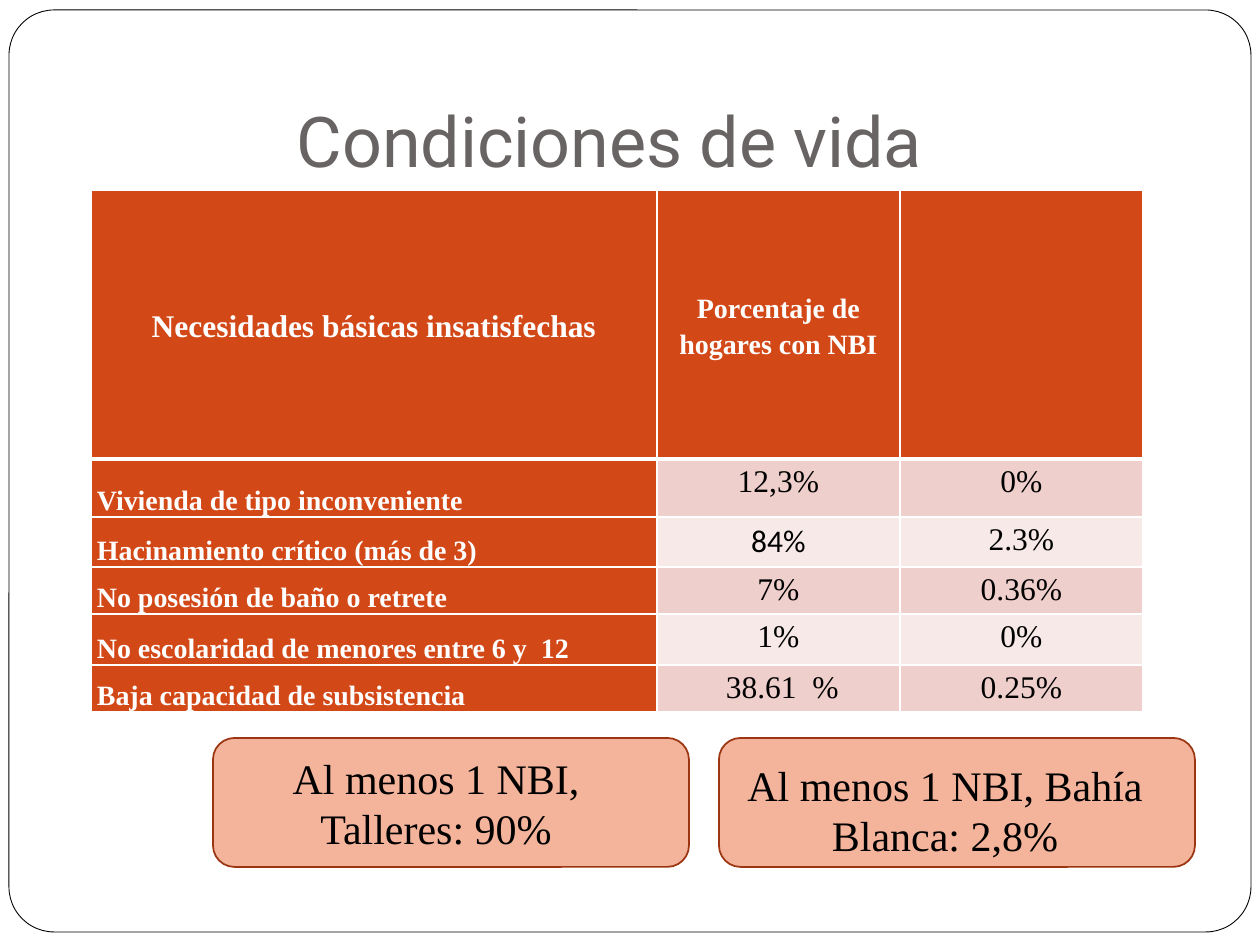
from lxml.etree import SubElement
from pptx import Presentation
from pptx.dml.color import RGBColor
from pptx.enum.shapes import MSO_SHAPE
from pptx.enum.text import MSO_ANCHOR, PP_ALIGN
from pptx.oxml.ns import qn
from pptx.util import Emu, Pt

PX_PER_INCH = 126
SERIF = "Times New Roman"
COLORS = {
    "white": "FFFFFF",
    "black": "000000",
    "title": "696464",
    "orange": "D34817",
    "band_dark": "EFCFCC",
    "band_light": "F7E9E8",
    "box_fill": "F4B39B",
    "box_line": "9C3511",
}

COLUMN_WIDTHS = [566, 243, 243]
ROW_HEIGHTS = [269, 58, 50, 47, 51, 47]
HEADERS = [("Necesidades básicas insatisfechas", 18),
           ("Porcentaje de hogares con NBI", 16), ("", 18)]
ROWS = [
    ("Vivienda de tipo inconveniente", "12,3%", "0%"),
    ("Hacinamiento crítico (más de 3)", "84%", "2.3%"),
    ("No posesión de baño o retrete", "7%", "0.36%"),
    ("No escolaridad de menores entre 6 y  12", "1%", "0%"),
    ("Baja capacidad de subsistencia", " 38.61  %", "0.25%"),
]


def px(length):
    return Emu(round(length * 914400 / PX_PER_INCH))


def color(name):
    return RGBColor.from_string(COLORS[name])


def style_paragraph(paragraph, size, font_color, font=SERIF, bold=False, align=PP_ALIGN.CENTER):
    paragraph.alignment = align
    paragraph.font.name = font
    paragraph.font.size = Pt(size)
    paragraph.font.bold = bold
    paragraph.font.color.rgb = color(font_color)


def add_rounded_box(slide, box, fill, line, line_width, corner=0.1667):
    shape = slide.shapes.add_shape(MSO_SHAPE.ROUNDED_RECTANGLE, *map(px, box))
    shape.adjustments[0] = corner
    shape.shadow.inherit = False
    shape.fill.solid()
    shape.fill.fore_color.rgb = color(fill)
    shape.line.color.rgb = color(line)
    shape.line.width = Pt(line_width)


def add_text(slide, box, text, size, font_color, font=SERIF, anchor=MSO_ANCHOR.TOP):
    frame = slide.shapes.add_textbox(*map(px, box)).text_frame
    frame.word_wrap = True
    frame.vertical_anchor = anchor
    paragraph = frame.paragraphs[0]
    paragraph.text = text
    style_paragraph(paragraph, size, font_color, font)
    return frame


def set_borders(cell, top, bottom):
    properties = cell._tc.get_or_add_tcPr()
    for tag, width in (("a:lnL", 1), ("a:lnR", 1), ("a:lnT", top), ("a:lnB", bottom)):
        line = SubElement(properties, qn(tag), w=str(Pt(width)))
        fill = SubElement(line, qn("a:solidFill"))
        SubElement(fill, qn("a:srgbClr"), val=COLORS["white"])


def fill_cell(cell, text, fill, anchor, top=1, bottom=1, **text_style):
    cell.margin_left = cell.margin_right = px(6)
    cell.margin_top = cell.margin_bottom = 0
    cell.vertical_anchor = anchor
    set_borders(cell, top, bottom)
    cell.fill.solid()
    cell.fill.fore_color.rgb = color(fill)
    paragraph = cell.text_frame.paragraphs[0]
    paragraph.text = text
    paragraph.line_spacing = 1.15
    style_paragraph(paragraph, **text_style)
    return paragraph


def add_needs_table(slide, left, top):
    table = slide.shapes.add_table(
        len(ROW_HEIGHTS), len(COLUMN_WIDTHS), px(left), px(top),
        px(sum(COLUMN_WIDTHS)), px(sum(ROW_HEIGHTS))).table
    table.first_row = table.horz_banding = False
    for column, width in zip(table.columns, COLUMN_WIDTHS):
        column.width = px(width)
    for row, height in zip(table.rows, ROW_HEIGHTS):
        row.height = px(height)

    # Header row, with a thick rule below
    for index, (text, size) in enumerate(HEADERS):
        fill_cell(table.cell(0, index), text, "orange", MSO_ANCHOR.MIDDLE,
                  bottom=3, size=size, font_color="white", bold=True)

    # Need names on orange, percentages on alternating bands
    for index, (need, *values) in enumerate(ROWS, start=1):
        rule = 3 if index == 1 else 1
        paragraph = fill_cell(table.cell(index, 0), need, "orange", MSO_ANCHOR.BOTTOM,
                              top=rule, size=16, font_color="white", bold=True,
                              align=PP_ALIGN.LEFT)
        paragraph.space_after = Pt(6)
        band = "band_dark" if index % 2 else "band_light"
        for column, value in enumerate(values, start=1):
            font = "Calibri" if value == "84%" else SERIF
            fill_cell(table.cell(index, column), value, band, MSO_ANCHOR.TOP,
                      top=rule, size=18, font_color="black", font=font)


def main():
    presentation = Presentation()
    presentation.slide_width = px(1260)
    presentation.slide_height = px(945)
    slide = presentation.slides.add_slide(presentation.slide_layouts[6])

    # Slide frame
    add_rounded_box(slide, (9, 10, 1242, 922), "white", "black", 0.5, corner=0.049)

    # Title and table
    title = add_text(slide, (74, 36, 1071, 158), "Condiciones de vida", 40, "title",
                     font="Roboto", anchor=MSO_ANCHOR.BOTTOM)
    title.margin_bottom = px(13)
    add_needs_table(slide, 91, 190)

    # Summary boxes
    summaries = [
        (213, (213, 746, 446, 115), "Al menos 1 NBI, Talleres: 90%"),
        (719, (722, 753, 446, 115), "Al menos 1 NBI, Bahía Blanca: 2,8%"),
    ]
    for left, text_box, text in summaries:
        add_rounded_box(slide, (left, 738, 476, 129), "box_fill", "box_line", 1)
        add_text(slide, text_box, text, 24, "black")

    presentation.save("out.pptx")


if __name__ == "__main__":
    main()
